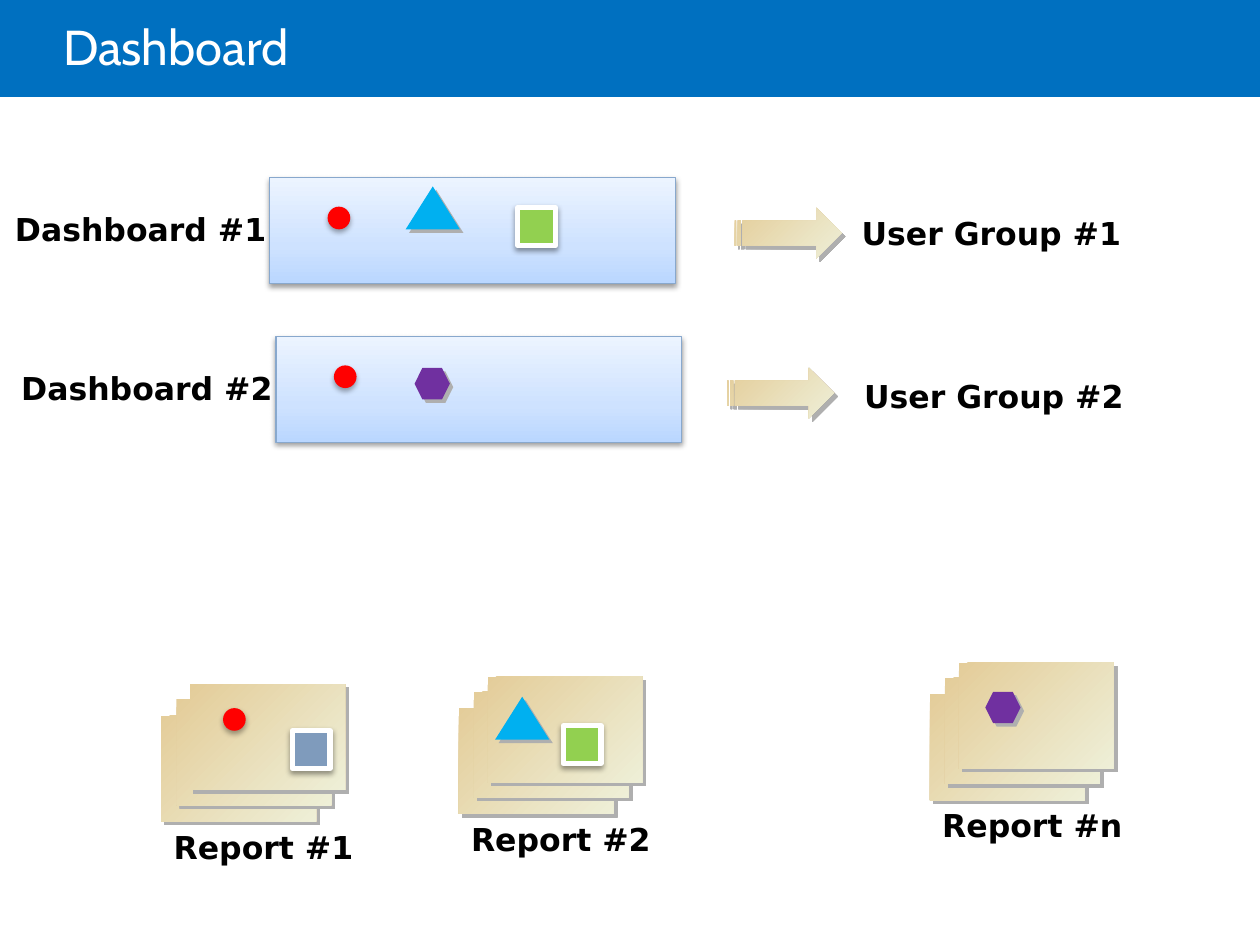
from dataclasses import dataclass

from lxml import etree
from pptx import Presentation
from pptx.dml.color import RGBColor
from pptx.enum.shapes import MSO_SHAPE
from pptx.enum.text import MSO_ANCHOR, MSO_AUTO_SIZE, PP_ALIGN
from pptx.oxml.ns import qn
from pptx.util import Inches, Pt

RECT = MSO_SHAPE.RECTANGLE
OVAL = MSO_SHAPE.OVAL
TRI = MSO_SHAPE.ISOSCELES_TRIANGLE
HEX = MSO_SHAPE.HEXAGON
ARROW = MSO_SHAPE.STRIPED_RIGHT_ARROW
MIDDLE = MSO_ANCHOR.MIDDLE
LEFT = PP_ALIGN.LEFT
GROW = MSO_AUTO_SIZE.SHAPE_TO_FIT_TEXT
FIXED = MSO_AUTO_SIZE.NONE


@dataclass(frozen=True)
class Theme:
    band: str = "0070C0"
    white: str = "FFFFFF"
    ink: str = "000000"
    edge: str = "88A8CD"
    head_font: str = "Cabin"
    font: str = "DejaVu Sans"
    head_size: int = 28
    size: int = 18
    # Gradients: angle, then (position, colour) stops
    sand: tuple = (45, ((0, "E4CD9A"), (100, "EEEFD7")))
    sky: tuple = (270, ((0, "BAD7FF"), (35, "CEE2FF"), (100, "ECF4FF")))
    # Shadows: colour, opacity, blur, distance, angle
    hard: tuple = ("AFAFAF", 100, 0, 2.8, 45)
    soft: tuple = ("000000", 38, 3.1, 1.6, 90)
    dot: tuple = ("000000", 35, 3.1, 1.8, 90)


T = Theme()

# Markers: preset, width, height, fill, outline, shadow
MARKS = {
    "dot": (OVAL, 0.18, 0.18, "FF0000", None, T.dot),
    "tri": (TRI, 0.43, 0.34, "00B0F0", None, T.hard),
    "green": (RECT, 0.3, 0.3, "92D050", (T.white, 3), T.soft),
    "grey": (RECT, 0.3, 0.3, "7F9BBC", (T.white, 3), T.soft),
    "hex": (HEX, 0.28, 0.25, "7030A0", None, T.hard),
}

# Reports: name, left, top, markers with offsets
REPORTS = [
    ("Report #1", 1.28, 5.43, [("dot", 0.49, 0.19), ("grey", 1.04, 0.37)]),
    ("Report #2", 3.64, 5.37, [("green", 0.83, 0.39), ("tri", 0.29, 0.16)]),
    ("Report #n", 7.38, 5.26, [("hex", 0.44, 0.23)]),
]

# Dashboards: name, left, top, markers with offsets
BOARDS = [
    ("Dashboard #1", 2.14, 1.41,
     [("dot", 0.46, 0.23), ("tri", 1.08, 0.07), ("green", 1.97, 0.24)]),
    ("Dashboard #2", 2.19, 2.67, [("dot", 0.46, 0.23), ("hex", 1.1, 0.25)]),
]

# User groups: name, left, top, arrow left, arrow top
USERS = [
    ("User Group #1", 6.74, 1.65, 5.83, 1.65),
    ("User Group #2", 6.76, 2.94, 5.77, 2.92),
]


def rgb(code):
    return RGBColor.from_string(code)


def node(host, tag, **attrs):
    return etree.SubElement(host, qn(tag), {k: str(v) for k, v in attrs.items()})


def shade(shape, grad):
    """Fill a shape with a linear gradient."""
    angle, stops = grad
    shape.fill.gradient()
    fill = shape._element.spPr.find(qn("a:gradFill"))
    for child in list(fill):
        fill.remove(child)
    row = node(fill, "a:gsLst")
    for pos, code in stops:
        stop = node(row, "a:gs", pos=pos * 1000)
        node(stop, "a:srgbClr", val=code)
    node(fill, "a:lin", ang=angle * 60000, scaled=0)


def cast(shape, shadow):
    """Give a shape an outer shadow."""
    code, alpha, blur, dist, angle = shadow
    host = shape._element.spPr.find(qn("a:effectLst"))
    outer = node(host, "a:outerShdw", blurRad=int(Pt(blur)), dist=int(Pt(dist)),
                 dir=angle * 60000, algn="ctr", rotWithShape=0)
    color = node(outer, "a:srgbClr", val=code)
    node(color, "a:alpha", val=alpha * 1000)


def block(shapes, kind, x, y, w, h, fill, line=None, shadow=None):
    shape = shapes.add_shape(kind, Inches(x), Inches(y), Inches(w), Inches(h))
    shape.shadow.inherit = False
    if isinstance(fill, tuple):
        shade(shape, fill)
    else:
        shape.fill.solid()
        shape.fill.fore_color.rgb = rgb(fill)
    if line:
        shape.line.color.rgb = rgb(line[0])
        shape.line.width = Pt(line[1])
    else:
        shape.line.fill.background()
    if shadow:
        cast(shape, shadow)
    return shape


def write(para, text, font, size, color, bold):
    run = para.add_run()
    run.text = text
    run.font.name = font
    run.font.size = Pt(size)
    run.font.color.rgb = rgb(color)
    run.font.bold = bold


def label(shapes, text, x, y, w):
    box = shapes.add_textbox(Inches(x), Inches(y), Inches(w), Inches(0.4))
    frame = box.text_frame
    frame.word_wrap = False
    frame.auto_size = GROW
    write(frame.paragraphs[0], text, T.font, T.size, T.ink, True)


def mark(shapes, name, x, y):
    kind, w, h, fill, line, shadow = MARKS[name]
    block(shapes, kind, x, y, w, h, fill, line, shadow)


def header(slide, text):
    band = block(slide.shapes, RECT, 0, 0, 10, 0.77, T.band)
    title = slide.shapes.title
    title._element.addprevious(band._element)
    title.left, title.top = Inches(0.5), Inches(0)
    title.width, title.height = Inches(8.5), Inches(0.81)
    frame = title.text_frame
    frame.auto_size = FIXED
    frame.vertical_anchor = MIDDLE
    frame.margin_left = 0
    frame.margin_right = Inches(0.1)
    frame.margin_top = frame.margin_bottom = Inches(0.05)
    para = frame.paragraphs[0]
    para.alignment = LEFT
    para.line_spacing = 0.85
    write(para, text, T.head_font, T.head_size, T.white, False)


def report(slide, name, x, y, marks):
    stack = slide.shapes.add_group_shape().shapes
    for dx, dy in ((0, 0.25), (0.12, 0.12), (0.23, 0)):
        block(stack, RECT, x + dx, y + dy, 1.23, 0.84, T.sand, shadow=T.hard)
    label(stack, name, x, y + 1.09, 1.64)
    for kind, dx, dy in marks:
        mark(slide.shapes, kind, x + dx, y + dy)


def board(slide, name, x, y, marks):
    panel = slide.shapes.add_group_shape().shapes
    block(panel, RECT, x, y, 3.22, 0.84, T.sky, (T.edge, 0.75), T.soft)
    for kind, dx, dy in marks:
        mark(panel, kind, x + dx, y + dy)
    label(panel, name, x - 2.12, y + 0.21, 2.22)


def users(slide, name, x, y, ax, ay):
    block(slide.shapes, ARROW, ax, ay, 0.85, 0.4, T.sand, shadow=T.hard)
    label(slide.shapes, name, x, y, 2.28)


def main():
    deck = Presentation()
    deck.slide_width, deck.slide_height = Inches(10), Inches(7.5)
    slide = deck.slides.add_slide(deck.slide_layouts[5])
    header(slide, "Dashboard")
    # Reports at the foot feed the dashboards above
    for row in REPORTS:
        report(slide, *row)
    for row in BOARDS:
        board(slide, *row)
    # Each dashboard serves one user group
    for row in USERS:
        users(slide, *row)
    deck.save("out.pptx")


if __name__ == "__main__":
    main()
